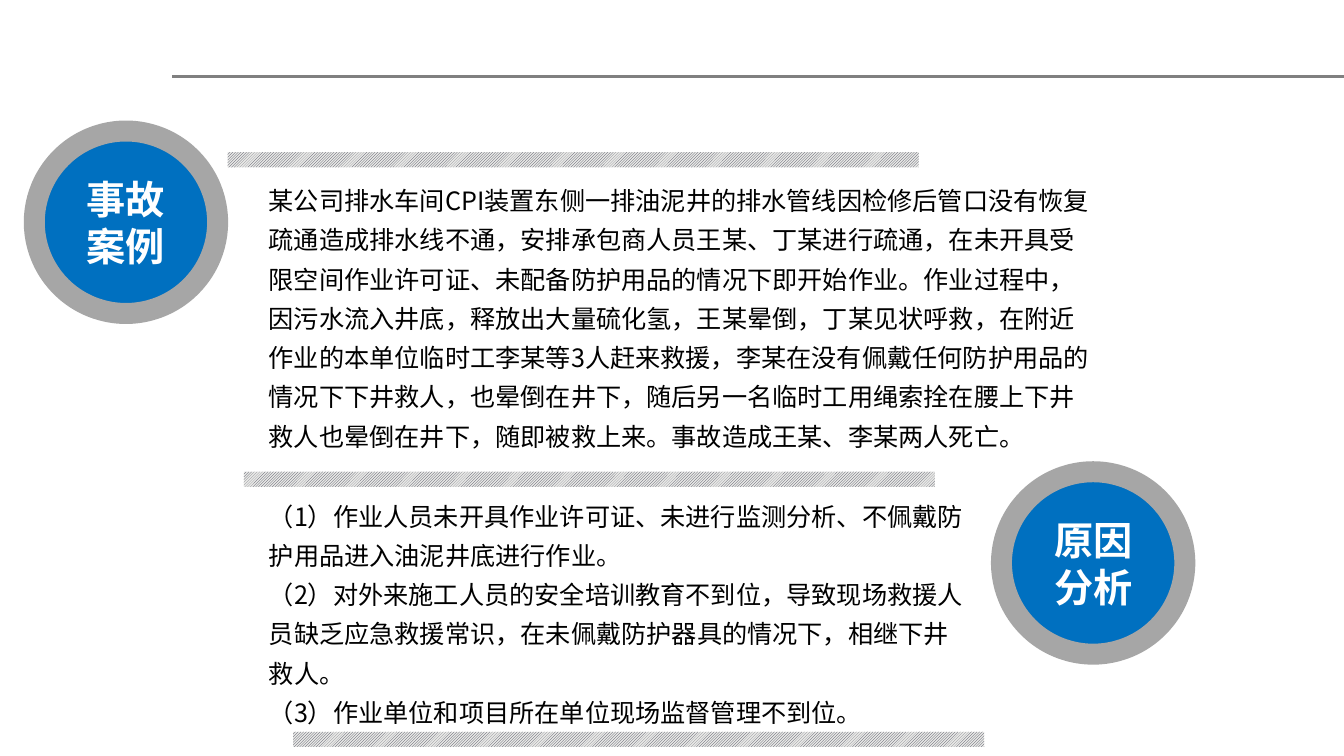
from dataclasses import dataclass

from lxml import etree
from pptx import Presentation
from pptx import util as u
from pptx.dml.color import RGBColor
from pptx.enum import dml, shapes, text
from pptx.oxml.ns import qn

SECTIONS = [
    {
        "badge": "事故案例",
        "badge_at": (34, 130),
        "body_box": (257, 170, 840, 283),
        "body": [
            "某公司排水车间CPI装置东侧一排油泥井的排水管线因检修后管口没有恢复疏通造成排水线不通，"
            "安排承包商人员王某、丁某进行疏通，在未开具受限空间作业许可证、未配备防护用品的情况下即开始作业。"
            "作业过程中，因污水流入井底，释放出大量硫化氢，王某晕倒，丁某见状呼救，"
            "在附近作业的本单位临时工李某等3人赶来救援，李某在没有佩戴任何防护用品的情况下下井救人，"
            "也晕倒在井下，随后另一名临时工用绳索拴在腰上下井救人也晕倒在井下，随即被救上来。"
            "事故造成王某、李某两人死亡。",
        ],
    },
    {
        "badge": "原因分析",
        "badge_at": (994, 468),
        "body_box": (257, 483, 719, 244),
        "body": [
            "（1）作业人员未开具作业许可证、未进行监测分析、不佩戴防护用品进入油泥井底进行作业。",
            "（2）对外来施工人员的安全培训教育不到位，导致现场救援人员缺乏应急救援常识，"
            "在未佩戴防护器具的情况下，相继下井救人。",
            "（3）作业单位和项目所在单位现场监督管理不到位。",
        ],
    },
]
STRIPES_AT = [(226, 151), (242, 468), (291, 726)]
STRIPE_SIZE = (686, 15)
BADGE_SIZE = (182, 181)
SLIDE_SIZE = (1334, 750)
RULE_START = (171, 76)
PX = u.Inches(1) // 100


@dataclass(frozen=True)
class Theme:
    font: str = "Noto Sans CJK SC"
    badge_size: int = 28
    body_size: int = 18
    body_spacing: float = 1.3
    rule_width: int = 2
    ring_width: int = 15
    rule: str = "808080"
    badge: str = "0070C0"
    ring: str = "A6A6A6"
    badge_text: str = "FFFFFF"
    body_text: str = "000000"
    stripe_front: str = "414455"
    stripe_back: str = "E8E8E6"


THEME = Theme()


def emu(*lengths):
    return [length * PX for length in lengths]


def color(value):
    return RGBColor.from_string(value)


def write(paragraph, words, size, ink, bold=False):
    run = paragraph.add_run()
    run.text = words
    run.font.size = u.Pt(size)
    run.font.bold = bold
    run.font.color.rgb = color(ink)
    run.font.name = THEME.font
    etree.SubElement(run.font._element, qn("a:ea"), typeface=THEME.font)


def add_rule(slide):
    left, top = RULE_START
    rule = slide.shapes.add_connector(
        shapes.MSO_CONNECTOR.STRAIGHT, *emu(left, top, SLIDE_SIZE[0], top))
    rule.line.color.rgb = color(THEME.rule)
    rule.line.width = u.Pt(THEME.rule_width)
    etree.SubElement(rule._element.spPr, qn("a:effectLst"))


def add_stripe(slide, corner):
    stripe = slide.shapes.add_shape(
        shapes.MSO_SHAPE.RECTANGLE, *emu(*corner, *STRIPE_SIZE))
    stripe.shadow.inherit = False
    stripe.fill.patterned()
    stripe.fill.pattern = dml.MSO_PATTERN.LIGHT_UPWARD_DIAGONAL
    stripe.fill.fore_color.rgb = color(THEME.stripe_front)
    stripe.fill.back_color.rgb = color(THEME.stripe_back)
    stripe.line.fill.background()


def add_badge(slide, label, corner):
    badge = slide.shapes.add_shape(
        shapes.MSO_SHAPE.OVAL, *emu(*corner, *BADGE_SIZE))
    badge.shadow.inherit = False
    badge.fill.solid()
    badge.fill.fore_color.rgb = color(THEME.badge)
    badge.line.color.rgb = color(THEME.ring)
    badge.line.width = u.Pt(THEME.ring_width)
    frame = badge.text_frame
    frame.word_wrap = True
    frame.vertical_anchor = text.MSO_ANCHOR.MIDDLE
    paragraph = frame.paragraphs[0]
    paragraph.alignment = text.PP_ALIGN.CENTER
    write(paragraph, label, THEME.badge_size, THEME.badge_text, bold=True)


def add_body(slide, box, lines):
    frame = slide.shapes.add_textbox(*emu(*box)).text_frame
    frame.word_wrap = True
    frame.auto_size = text.MSO_AUTO_SIZE.SHAPE_TO_FIT_TEXT
    for index, line in enumerate(lines):
        paragraph = frame.add_paragraph() if index else frame.paragraphs[0]
        paragraph.line_spacing = THEME.body_spacing
        write(paragraph, line, THEME.body_size, THEME.body_text)


def main():
    deck = Presentation()
    deck.slide_width, deck.slide_height = emu(*SLIDE_SIZE)
    slide = deck.slides.add_slide(deck.slide_layouts.get_by_name("Blank"))
    add_rule(slide)
    for corner in STRIPES_AT:
        add_stripe(slide, corner)
    for section in SECTIONS:
        add_badge(slide, section["badge"], section["badge_at"])
        add_body(slide, section["body_box"], section["body"])
    deck.save("out.pptx")


if __name__ == "__main__":
    main()
